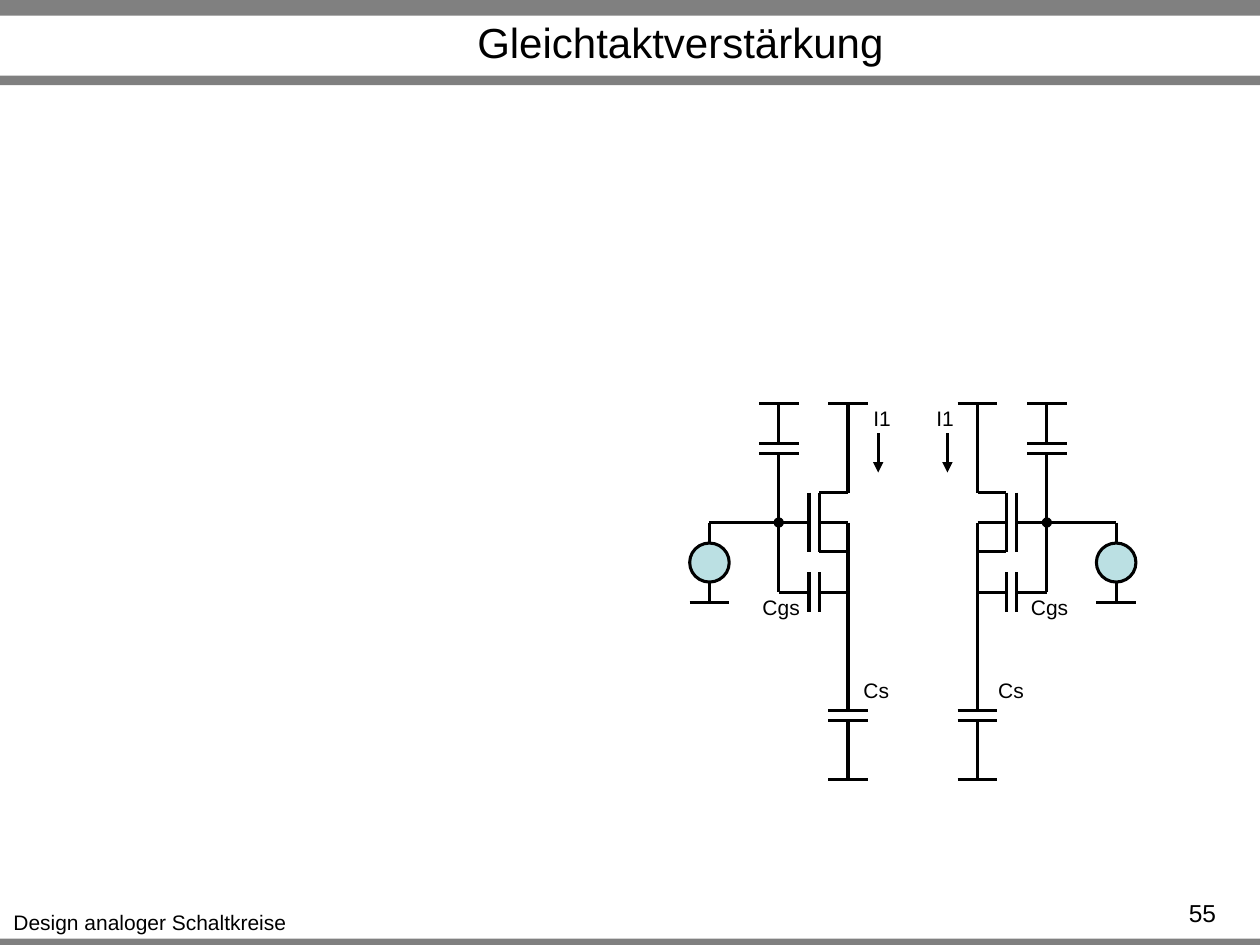
from lxml import etree
from pptx import Presentation
from pptx.dml.color import RGBColor
from pptx.enum.shapes import MSO_CONNECTOR as Connector, MSO_SHAPE as Shape
from pptx.enum.text import MSO_ANCHOR as Anchor, PP_ALIGN as Align
from pptx.oxml.ns import qn
from pptx.util import Pt

BLACK = RGBColor(0x00, 0x00, 0x00)
GRAY = RGBColor(0x80, 0x80, 0x80)
PALE_BLUE = RGBColor(0xBB, 0xE0, 0xE3)

AXIS = 521.6  # the two half circuits mirror each other about this x
PLATE = 11.3  # half the length of a capacitor plate or rail bar

# Distances from the axis
ARROW, DRAIN, CHANNEL, GATE, NODE, SOURCE = 19.8, 37, 53.5, 59.3, 76.6, 116.2
# Heights of the circuit's levels
RAIL, GATE_CAP, DRAIN_Y, GATE_Y, SOURCE_Y = 230.4, 253.4, 281.5, 298.6, 315.4
CGS_Y, CS_Y, GROUND = 338.4, 406, 445.7
CAP_GAP = 5.8
CIRCLE_TOP, CIRCLE_BOTTOM, CIRCLE_GROUND = 310.3, 332.6, 344.2


class Sketch:
    """Holds the style and the page that is being drawn."""

    font = "Arial"
    line_width = Pt(1.75)

    def __init__(self, page):
        self.page = page

    def bar(self, top, height):
        shape = self.page.shapes.add_shape(
            Shape.RECTANGLE, 0, Pt(top), Pt(720), Pt(height))
        shape.shadow.inherit = False
        shape.fill.solid()
        shape.fill.fore_color.rgb = GRAY
        shape.line.fill.background()

    def text(self, left, top, width, height, words, size=12,
             align=Align.CENTER, anchor=Anchor.TOP, wrap=False):
        box = self.page.shapes.add_textbox(Pt(left), Pt(top), Pt(width), Pt(height))
        frame = box.text_frame
        frame.word_wrap = wrap
        frame.vertical_anchor = anchor
        frame.text = words
        para = frame.paragraphs[0]
        para.alignment = align
        span = para.runs[0]
        span.font.name = self.font
        span.font.size = Pt(size)
        span.font.color.rgb = BLACK

    def wire(self, x1, y1, x2, y2, end=None):
        line = self.page.shapes.add_connector(
            Connector.STRAIGHT, Pt(x1), Pt(y1), Pt(x2), Pt(y2))
        line.line.color.rgb = BLACK
        line.line.width = self.line_width
        if end:
            stroke = line.line._get_or_add_ln()
            etree.SubElement(stroke, qn("a:tailEnd"), type=end)
        etree.SubElement(line._element.spPr, qn("a:effectLst"))

    def plate(self, x, y):
        self.wire(x - PLATE, y, x + PLATE, y)

    def circle(self, x, top, bottom):
        shape = self.page.shapes.add_shape(
            Shape.OVAL, Pt(x - PLATE), Pt(top), Pt(2 * PLATE), Pt(bottom - top))
        shape.shadow.inherit = False
        shape.fill.solid()
        shape.fill.fore_color.rgb = PALE_BLUE
        shape.line.color.rgb = BLACK
        shape.line.width = self.line_width

    def half_circuit(self, side):
        """Draws one half; side is -1 for the left and 1 for the right."""
        arrow, drain, channel, gate, node, source = (
            AXIS + side * distance
            for distance in (ARROW, DRAIN, CHANNEL, GATE, NODE, SOURCE))

        # Transistor
        for y in (DRAIN_Y, GATE_Y, SOURCE_Y):
            self.wire(drain, y, channel, y)
        for x in (channel, gate):
            self.wire(x, DRAIN_Y, x, SOURCE_Y)
        self.wire(gate, GATE_Y, node, GATE_Y)

        # Drain to the rail, source through Cs to ground
        self.wire(drain, RAIL, drain, DRAIN_Y)
        self.wire(drain, GATE_Y, drain, CGS_Y)
        self.wire(drain, CGS_Y, drain, CS_Y)
        self.wire(drain, CS_Y + CAP_GAP, drain, GROUND)
        for y in (RAIL, CS_Y, CS_Y + CAP_GAP, GROUND):
            self.plate(drain, y)

        # Capacitor from the rail to the gate node
        for y in (RAIL, GATE_CAP, GATE_CAP + CAP_GAP):
            self.plate(node, y)
        self.wire(node, RAIL, node, GATE_CAP)
        self.wire(node, GATE_CAP + CAP_GAP, node, GATE_Y, end="oval")

        # Cgs
        self.wire(node, GATE_Y, node, CGS_Y)
        self.wire(node, CGS_Y, gate, CGS_Y)
        self.wire(channel, CGS_Y, drain, CGS_Y)
        for x in (gate, channel):
            self.wire(x, CGS_Y - PLATE, x, CGS_Y + PLATE)

        # Signal source
        self.wire(node, GATE_Y, source, GATE_Y)
        self.wire(source, GATE_Y, source, CIRCLE_TOP)
        self.circle(source, CIRCLE_TOP, CIRCLE_BOTTOM)
        self.wire(source, CIRCLE_BOTTOM, source, CIRCLE_GROUND)
        self.plate(source, CIRCLE_GROUND)

        # Current
        self.wire(arrow, 247.7, arrow, 270, end="triangle")


def main():
    deck = Presentation()
    deck.slide_width, deck.slide_height = Pt(720), Pt(540)
    sketch = Sketch(deck.slides.add_slide(deck.slide_layouts[6]))

    for top, height in ((536.4, 5.4), (0, 9), (43.2, 5.4)):
        sketch.bar(top, height)
    sketch.text(0, 516.2, 171.4, 21.6, "Design analoger Schaltkreise")
    sketch.text(426.2, 509.8, 275.8, 30.2, "55", size=14,
                align=Align.RIGHT, wrap=True)
    sketch.text(93.6, 10.1, 590.4, 27.4, "Gleichtaktverstärkung", size=24,
                anchor=Anchor.MIDDLE, wrap=True)

    for side in (-1, 1):
        sketch.half_circuit(side)

    for words, top, width, lefts in (
            ("Cs", 383.8, 29.5, (486, 563)),
            ("Cgs", 336.2, 36, (428.4, 581.8)),
            ("I1", 228.2, 24.5, (491.8, 527.8))):
        for left in lefts:
            sketch.text(left, top, width, 21.6, words)

    deck.save("out.pptx")


if __name__ == "__main__":
    main()
